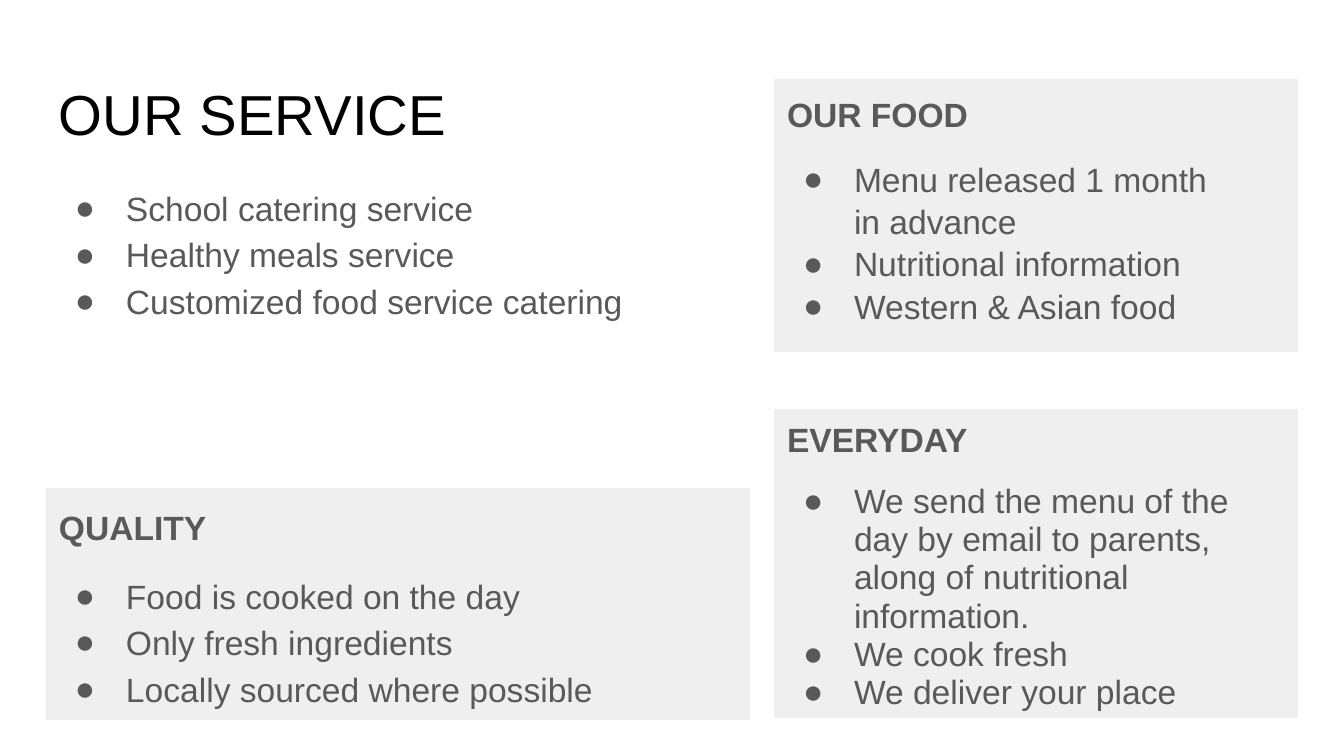
"""Build the catering service slide: a title, a plain list and three shaded panels."""
import lxml.etree
import pptx
import pptx.dml.color
import pptx.enum.shapes
import pptx.enum.text
import pptx.oxml.ns
import pptx.util

PX = 914400 / 134.4
FONT = "Arial"
COLOURS = {"title": "000000", "text": "595959", "panel": "EFEFEF"}
LEFT, RIGHT = 46, 774
WIDE, NARROW = 704, 524
INSET = 13

SERVICES = ["School catering service", "Healthy meals service", "Customized food service catering"]
PANELS = [
    ("OUR FOOD", (RIGHT, 79, NARROW, 273), 1.05,
     ["Menu released 1 month \vin advance", "Nutritional information", "Western & Asian food"]),
    ("QUALITY", (LEFT, 488, WIDE, 232), 1.15,
     ["Food is cooked on the day", "Only fresh ingredients", "Locally sourced where possible"]),
    ("EVERYDAY", (RIGHT, 409, NARROW, 309), 0.95,
     ["We send the menu of the day by email to parents, along of nutritional information.",
      "We cook fresh", "We deliver your place"]),
]


def emu(px):
    return pptx.util.Emu(round(px * PX))


def colour(name):
    return pptx.dml.color.RGBColor.from_string(COLOURS[name])


def set_values(target, values):
    for name, value in values.items():
        setattr(target, name, value)


def prepare_frame(box):
    frame = box.text_frame
    set_values(frame, {
        "word_wrap": True,
        "auto_size": pptx.enum.text.MSO_AUTO_SIZE.NONE,
        "vertical_anchor": pptx.enum.text.MSO_ANCHOR.TOP,
        "margin_left": emu(INSET), "margin_right": emu(INSET),
        "margin_top": emu(INSET), "margin_bottom": emu(INSET),
    })
    return frame


def add_text_box(page, bounds):
    return prepare_frame(page.shapes.add_textbox(*map(emu, bounds)))


def add_panel(page, bounds):
    box = page.shapes.add_shape(pptx.enum.shapes.MSO_SHAPE.RECTANGLE, *map(emu, bounds))
    box.shadow.inherit = False
    box.fill.solid()
    box.fill.fore_color.rgb = colour("panel")
    box.line.fill.background()
    return prepare_frame(box)


def write_para(para, text, spacing=1.0, size=18, bold=False, tint="text"):
    para.text = text
    set_values(para, {"alignment": pptx.enum.text.PP_ALIGN.LEFT, "line_spacing": spacing})
    for span in para.runs:
        set_values(span.font, {"name": FONT, "size": pptx.util.Pt(size), "bold": bold})
        span.font.color.rgb = colour(tint)


def add_bullet(para):
    properties = para._p.get_or_add_pPr()
    properties.set("marL", str(emu(67)))
    properties.set("indent", str(emu(-51)))
    qn = pptx.oxml.ns.qn
    tint = lxml.etree.SubElement(properties, qn("a:buClr"))
    lxml.etree.SubElement(tint, qn("a:srgbClr"), val=COLOURS["text"])
    lxml.etree.SubElement(properties, qn("a:buFont"), typeface=FONT)
    lxml.etree.SubElement(properties, qn("a:buChar"), char="●")


def write_list(frame, items, spacing, heading=None):
    if heading:
        write_para(frame.paragraphs[0], heading, spacing, bold=True)
    for index, item in enumerate(items):
        para = frame.add_paragraph() if heading or index else frame.paragraphs[0]
        write_para(para, item, spacing)
        if heading and index == 0:
            para.space_before = pptx.util.Pt(12)
        add_bullet(para)


def main():
    deck = pptx.Presentation()
    set_values(deck, {"slide_width": emu(1344), "slide_height": emu(756)})
    page = deck.slides.add_slide(deck.slide_layouts[6])
    title = add_text_box(page, (LEFT, 66, 1252, 85))
    write_para(title.paragraphs[0], "OUR SERVICE", size=30.2, tint="title")
    write_list(add_text_box(page, (LEFT, 169, WIDE, 273)), SERVICES, 1.15)
    for heading, bounds, spacing, items in PANELS:
        write_list(add_panel(page, bounds), items, spacing, heading)
    deck.save("out.pptx")


if __name__ == "__main__":
    main()
